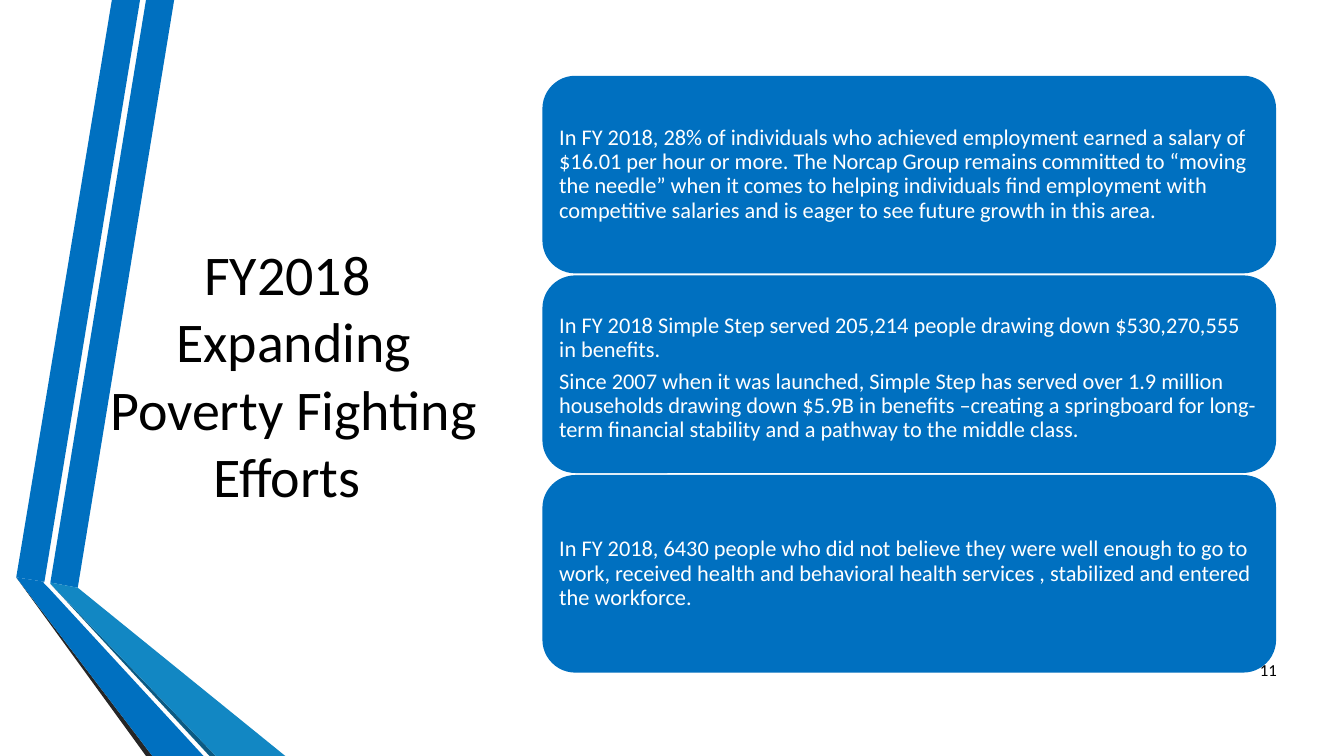
"""Build the FY2018 poverty fighting slide."""
from dataclasses import dataclass

from pptx import Presentation
from pptx import util as u
from pptx.dml.color import RGBColor
from pptx.enum import shapes, text

TITLE = "FY2018 \vExpanding Poverty Fighting Efforts "
NUMBER = "11"
CARDS = [
    ["In FY 2018, 28% of individuals who achieved employment earned a salary of "
     "$16.01 per hour or more. The Norcap Group remains committed to “moving the "
     "needle” when it comes to helping individuals find employment with competitive "
     "salaries and is eager to see future growth in this area."],
    ["In FY 2018 Simple Step served 205,214 people drawing down $530,270,555 in "
     "benefits.",
     "Since 2007 when it was launched, Simple Step has served over 1.9 million "
     "households drawing down $5.9B in benefits –creating a springboard for "
     "long-term financial stability and a pathway to the middle class."],
    ["In FY 2018, 6430 people who did not believe they were well enough to go to "
     "work, received health and behavioral health services , stabilized and entered "
     "the workforce."],
]
BANDS = [
    ("blue", [(1.27, 14.68), (1.96, 14.81), (4.39, 0), (3.68, 0)]),
    ("blue", [(3.53, 0), (2.82, 0), (0.41, 14.55), (1.12, 14.66)]),
    ("dark", [(0.41, 14.55), (3.68, 19.05), (3.84, 19.05)]),
    ("navy", [(1.27, 14.71), (5.28, 19.05), (5.44, 19.05)]),
    ("sky", [(1.27, 14.71), (5.44, 19.05), (7.19, 19.05), (1.96, 14.81),
             (1.27, 14.68)]),
    ("blue", [(5.13, 19.05), (1.22, 14.81), (1.09, 14.68), (1.12, 14.66),
              (0.41, 14.55), (3.84, 19.05)]),
]


@dataclass(frozen=True)
class Theme:
    """Hold colours, font and type sizes."""
    blue: str = "0070C0"
    dark: str = "262626"
    navy: str = "0C5A82"
    sky: str = "1287C3"
    black: str = "000000"
    white: str = "FFFFFF"
    font: str = "Calibri"
    head: int = 40
    body: int = 16
    note: int = 12


THEME = Theme()
TITLE_BOX = (2.36, 2.34, 10.08, 14.17)
NUMBER_BOX = (30.91, 16.36, 1.52, 1.02)
CARD_BOX = (13.67, 1.91, 18.49, 4.98)
PITCH = 5.03
INSET = 0.18
DROP = 0.2


def cms(nums):
    """Turn plain numbers into lengths."""
    return [u.Cm(num) for num in nums]


def apply(item, style):
    """Set each attribute named in a dict."""
    for name, value in style.items():
        setattr(item, name, value)


def paint(shape, tone):
    """Give a shape a flat fill with no line or shadow."""
    shape.shadow.inherit = False
    shape.fill.solid()
    shape.fill.fore_color.rgb = RGBColor.from_string(getattr(THEME, tone))
    shape.line.fill.background()


def write(frame, lines, size, tone, para, **box):
    """Fill a text frame with formatted paragraphs."""
    apply(frame, {"word_wrap": True, "auto_size": text.MSO_AUTO_SIZE.NONE,
                  "vertical_anchor": text.MSO_ANCHOR.MIDDLE, **box})
    frame.text = "\n".join(lines)
    for part in frame.paragraphs:
        apply(part, para)
        for run in part.runs:
            apply(run.font, {"name": THEME.font, "size": u.Pt(size)})
            run.font.color.rgb = RGBColor.from_string(getattr(THEME, tone))


def add_bands(slide):
    """Draw the folded ribbon behind the title."""
    for tone, spots in BANDS:
        first, *rest = [cms(spot) for spot in spots]
        path = slide.shapes.build_freeform(*first)
        path.add_line_segments(rest, close=True)
        band = path.convert_to_shape()
        paint(band, tone)
        slide.shapes.title.element.addprevious(band.element)


def add_cards(slide):
    """Stack the rounded cards at an even pitch."""
    left, top, width, height = CARD_BOX
    para = {"alignment": text.PP_ALIGN.LEFT, "line_spacing": 0.9,
            "space_after": u.Pt(5.6)}
    edges = ("margin_left", "margin_top", "margin_right", "margin_bottom")
    for row, lines in enumerate(CARDS):
        spot = cms((left, top + row * PITCH, width, height))
        card = slide.shapes.add_shape(shapes.MSO_SHAPE.ROUNDED_RECTANGLE, *spot)
        paint(card, "blue")
        box = dict.fromkeys(edges, u.Cm(INSET))
        if len(lines) > 1:
            box["margin_top"] = u.Cm(INSET + DROP)
        write(card.text_frame, lines, THEME.body, "white", para, **box)


def main():
    """Build and save the slide."""
    deck = Presentation()
    apply(deck, {"slide_width": u.Cm(33.87), "slide_height": u.Cm(19.05)})
    slide = deck.slides.add_slide(deck.slide_layouts[5])
    title = slide.shapes.title
    apply(title, dict(zip(("left", "top", "width", "height"), cms(TITLE_BOX))))
    write(title.text_frame, [TITLE], THEME.head, "black",
          {"alignment": text.PP_ALIGN.CENTER})
    add_bands(slide)
    add_cards(slide)
    number = slide.shapes.add_textbox(*cms(NUMBER_BOX))
    write(number.text_frame, [NUMBER], THEME.note, "black",
          {"alignment": text.PP_ALIGN.RIGHT, "space_after": u.Pt(6)})
    deck.save("out.pptx")


if __name__ == "__main__":
    main()
